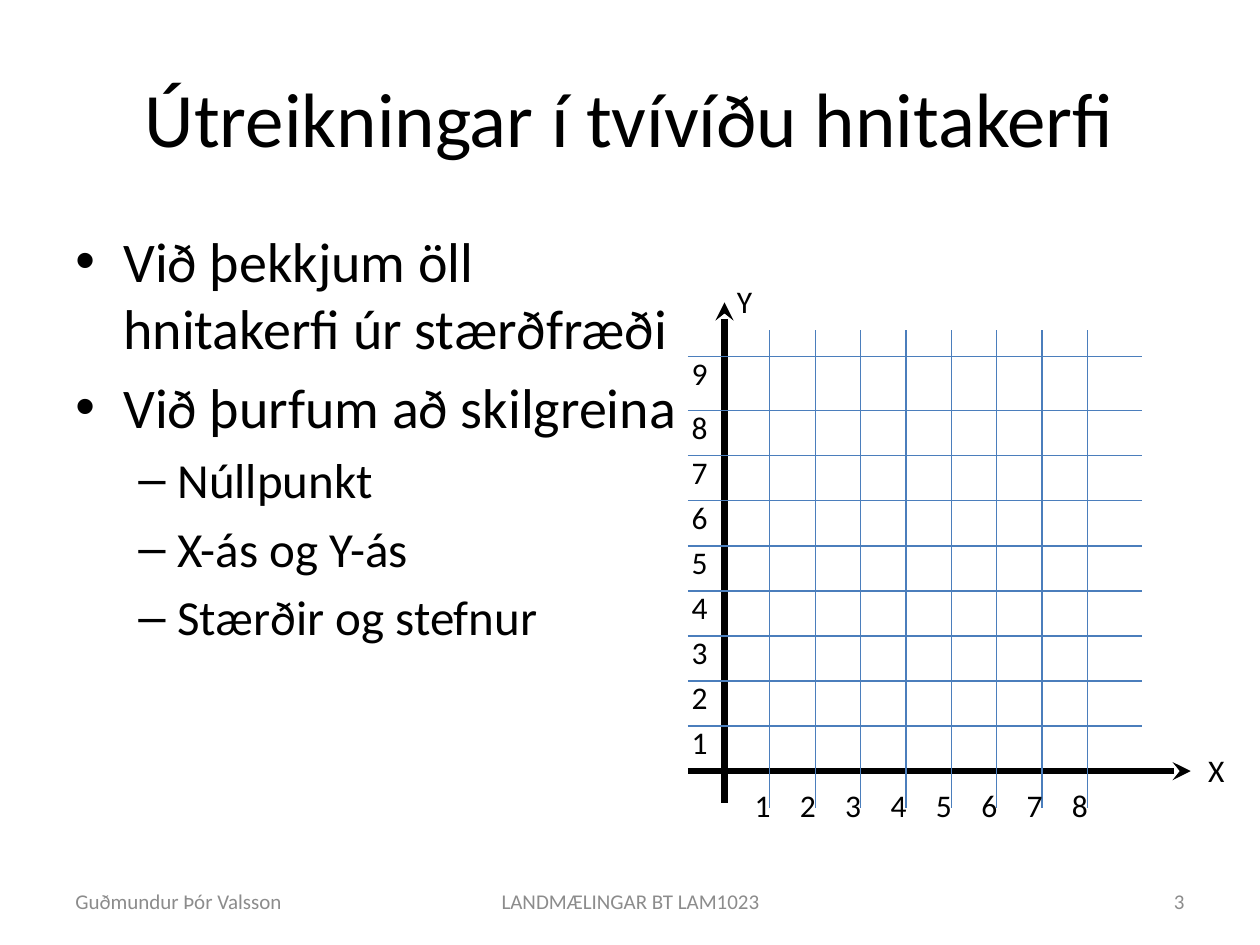
from lxml.etree import SubElement
from pptx import Presentation
from pptx.dml.color import RGBColor
from pptx.enum.shapes import MSO_CONNECTOR
from pptx.enum.text import MSO_ANCHOR as ANCHOR, MSO_AUTO_SIZE as AUTO, PP_ALIGN as ALIGN
from pptx.oxml.ns import qn
from pptx.util import Inches, Pt

COLORS = {"text": "000000", "footer": "8C8C8C", "grid": "4B7EBC"}
COL, ROW = 0.5, 0.25                # inches per slide column and row
ORIGIN_X, ORIGIN_Y = 11.5, 24.48    # origin of the coordinate system
STEP_X, STEP_Y = 0.72, 1.43         # one unit on each axis


class SlideBuilder:
    """Places elements on a slide grid of 20 columns by 30 rows."""

    font = "Calibri"

    def __init__(self, prs):
        self.slide = prs.slides.add_slide(prs.slide_layouts[6])

    def point(self, col, row):
        return Inches(col * COL), Inches(row * ROW)

    def style(self, p, size, color):
        for r in p.runs:
            r.font.name = self.font
            r.font.size = Pt(size)
            r.font.color.rgb = RGBColor.from_string(COLORS[color])

    def text(self, text, at, size, color="text", align=ALIGN.LEFT, anchor=ANCHOR.MIDDLE):
        col, row, cols, rows = at
        sp = self.slide.shapes.add_textbox(*self.point(col, row), *self.point(cols, rows))
        tf = sp.text_frame
        tf.word_wrap = True
        tf.vertical_anchor = anchor
        tf.text = text
        p = tf.paragraphs[0]
        p.alignment = align
        self.style(p, size, color)
        return tf

    def label(self, text, col, row, cols=0.6, rows=1.48):
        tf = self.text(text, (col, row, cols, rows), 18, anchor=ANCHOR.TOP)
        tf.word_wrap = False
        tf.auto_size = AUTO.SHAPE_TO_FIT_TEXT

    def bullets(self, items, at):
        """items holds pairs of level and wording."""
        levels = [(32, "•", 0.38, 0.38), (28, "–", 0.81, 0.31)]
        tf = self.text("", at, 32, anchor=ANCHOR.TOP)
        for i, (level, wording) in enumerate(items):
            size, mark, margin, hanging = levels[level]
            p = tf.add_paragraph() if i else tf.paragraphs[0]
            p.text = wording
            p.level = level
            if i:
                p.space_before = Pt(size * 0.2)
            pPr = p._p.get_or_add_pPr()
            pPr.set("marL", str(Inches(margin)))
            pPr.set("indent", str(-Inches(hanging)))
            SubElement(pPr, qn("a:buFont"), typeface="Arial")
            SubElement(pPr, qn("a:buChar"), char=mark)
            self.style(p, size, "text")

    def line(self, start, end, color="grid", width=0.75, arrow=False):
        cx = self.slide.shapes.add_connector(
            MSO_CONNECTOR.STRAIGHT, *self.point(*start), *self.point(*end))
        cx.line.color.rgb = RGBColor.from_string(COLORS[color])
        cx.line.width = Pt(width)
        if arrow:
            SubElement(cx.line._get_or_add_ln(), qn("a:tailEnd"), type="stealth")
        SubElement(cx._element.spPr, qn("a:effectLst"))

    def axis(self, start, end):
        self.line(start, end, "text", 3.5, arrow=True)


def draw_coordinate_system(s):
    left, right, top, bottom = 10.92, 18.12, 10.48, 25.64
    s.label("Y", 11.5, 8.76, 0.76, 1.84)
    s.axis((left, ORIGIN_Y), (18.9, ORIGIN_Y))
    s.label("X", 18.98, 23.64, 0.82, 1.84)
    s.axis((ORIGIN_X, 25.48), (ORIGIN_X, 9.6))

    # The ninth row is slightly taller than the others
    rows = [ORIGIN_Y - n * STEP_Y for n in range(1, 9)] + [11.32]
    cols = [ORIGIN_X + n * STEP_X for n in range(1, 9)]
    for row in rows:
        s.line((left, row), (right, row))
    for col in cols:
        s.line((col, bottom), (col, top))
    for n, col in enumerate(cols, 1):
        s.label(str(n), col - 0.44, 24.76)
    for n, row in enumerate(rows, 1):
        s.label(str(n), 10.78, row - 0.28)


def main():
    prs = Presentation()
    prs.slide_width, prs.slide_height = Inches(10), Inches(7.5)
    s = SlideBuilder(prs)
    s.text("Útreikningar í tvívíðu hnitakerfi", (1, 1.2, 18, 5), 44, align=ALIGN.CENTER)
    s.bullets([
        (0, "Við þekkjum öll hnitakerfi úr stærðfræði"),
        (0, "Við þurfum að skilgreina"),
        (1, "Núllpunkt"),
        (1, "X-ás og Y-ás"),
        (1, "Stærðir og stefnur"),
    ], (1, 7, 10.1, 19.8))
    for text, col, cols, align in [
        ("Guðmundur Þór Valsson", 1, 4.66, ALIGN.LEFT),
        ("LANDMÆLINGAR BT LAM1023", 6.84, 6.34, ALIGN.CENTER),
        ("3", 14.34, 4.66, ALIGN.RIGHT),
    ]:
        s.text(text, (col, 27.8, cols, 1.6), 12, "footer", align)
    draw_coordinate_system(s)
    prs.save("out.pptx")


if __name__ == "__main__":
    main()
